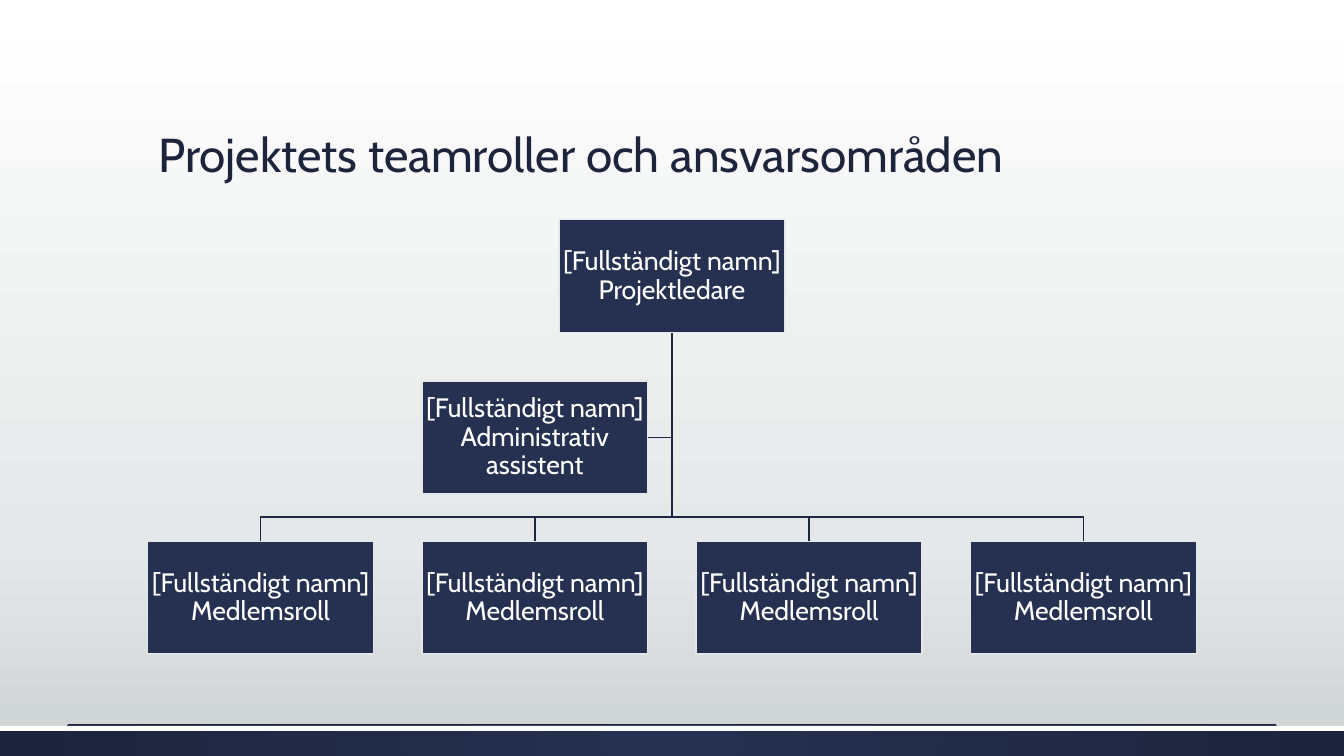
"""Build the project team organisation chart slide."""
from pptx import Presentation as Deck
from pptx.dml.color import RGBColor as Color
from pptx.enum.shapes import MSO_CONNECTOR as Link, MSO_SHAPE as Form
from pptx.enum.text import MSO_ANCHOR as Anchor, MSO_AUTO_SIZE as Auto, PP_ALIGN as Align
from pptx.oxml import parse_xml
from pptx.oxml.ns import nsdecls
from pptx.util import Inches, Pt

TITLE = "Projektets teamroller och ansvarsområden"
LEAD = "[Fullständigt namn] Projektledare"
AIDE = "[Fullständigt namn] Administrativ assistent"
TEAM = ["[Fullständigt namn] Medlemsroll"] * 4

THEME = {
    "font": "Cabin", "head": 34, "body": 19,
    "navy": "263050", "ink": "1D243C", "wire": "1E2640",
    "edge": "E5E8E8", "white": "FFFFFF",
    "sky": [(0, "FFFFFF"), (72, "E5E8E8"), (100, "CDD2D2")],
    "base": [(0, "263050"), (100, "1D243C")],
}
DOWN = '<a:lin ang="5400000" scaled="0"/>'
ROUND = '<a:path path="circle"><a:fillToRect l="50000" t="50000" r="50000" b="50000"/></a:path>'

WIDE, HIGH = 13.33, 7.5
MID = WIDE / 2
BOX_W, BOX_H, STEP = 2.24, 1.12, 2.72
TOP_Y, AIDE_Y, TEAM_Y, BAR_Y = 2.18, 3.78, 5.37, 5.13
FOOT_Y, SIDE = 7.2, 0.67

HEAD_FRAME = {"vertical_anchor": Anchor.BOTTOM, "auto_size": Auto.NONE, "word_wrap": True}
BOX_FRAME = {"vertical_anchor": Anchor.MIDDLE, "word_wrap": True}
BOX_FRAME.update({f"margin_{s}": Inches(0.01) for s in ("left", "top", "right", "bottom")})


def apply(item, values):
    """Set each named attribute on the item."""
    for key, value in values.items():
        setattr(item, key, value)


def tint(name):
    """Return a theme colour."""
    return Color.from_string(THEME[name])


def blend(fill, node, stops, mode):
    """Give a fill gradient stops and a direction."""
    fill.gradient()
    grad = node.xpath(".//a:gradFill")[0]
    for part in list(grad):
        grad.remove(part)
    marks = "".join(f'<a:gs pos="{at * 1000}"><a:srgbClr val="{hue}"/></a:gs>' for at, hue in stops)
    fresh = parse_xml(f'<a:gradFill {nsdecls("a")}><a:gsLst>{marks}</a:gsLst>{mode}</a:gradFill>')
    for part in list(fresh):
        grad.append(part)


def write(shape, text, frame, align, size, hue):
    """Put formatted text in a shape."""
    apply(shape.text_frame, frame)
    shape.text_frame.text = text
    para = shape.text_frame.paragraphs[0]
    apply(para, {"alignment": align, "line_spacing": 0.9})
    apply(para.font, {"name": THEME["font"], "size": Pt(THEME[size])})
    para.font.color.rgb = tint(hue)


def rect(slide, x, y, w, h, hue):
    """Add a flat rectangle without an outline."""
    shape = slide.shapes.add_shape(Form.RECTANGLE, *map(Inches, (x, y, w, h)))
    shape.shadow.inherit = False
    shape.fill.solid()
    shape.fill.fore_color.rgb = tint(hue)
    shape.line.fill.background()
    return shape


def box(slide, x, y, text):
    """Add one role box centred on x."""
    shape = rect(slide, x - BOX_W / 2, y, BOX_W, BOX_H, "navy")
    shape.line.color.rgb = tint("edge")
    shape.line.width = Pt(1)
    write(shape, text, BOX_FRAME, Align.CENTER, "body", "white")


def wire(slide, points):
    """Draw an open line through the points."""
    first, *rest = [(Inches(x), Inches(y)) for x, y in points]
    pen = slide.shapes.build_freeform(*first)
    pen.add_line_segments(rest, close=False)
    shape = pen.convert_to_shape()
    shape.shadow.inherit = False
    shape.fill.background()
    shape.line.color.rgb = tint("wire")
    shape.line.width = Pt(1)


def footer(slide):
    """Draw the bottom band and its rule."""
    band = rect(slide, 0, FOOT_Y, WIDE, HIGH - FOOT_Y, "navy")
    blend(band.fill, band._element, THEME["base"], ROUND)
    rect(slide, 0, FOOT_Y, WIDE, 0.05, "white")
    ends = map(Inches, (SIDE, FOOT_Y - 0.01, WIDE - SIDE, FOOT_Y - 0.01))
    rule = slide.shapes.add_connector(Link.STRAIGHT, *ends)
    rule.line.color.rgb = tint("ink")
    rule.line.width = Pt(0.5)
    rule._element.spPr.append(parse_xml(f'<a:effectLst {nsdecls("a")}/>'))


def chart(slide):
    """Draw the links, then the boxes over them."""
    spots = [MID + (i - (len(TEAM) - 1) / 2) * STEP for i in range(len(TEAM))]
    root = (MID, TOP_Y + BOX_H)
    turn = AIDE_Y + BOX_H / 2
    wire(slide, [root, (MID, turn), (spots[1] + BOX_W / 2, turn)])
    for x in spots:
        wire(slide, [root, (MID, BAR_Y), (x, BAR_Y), (x, TEAM_Y)])
    box(slide, MID, TOP_Y, LEAD)
    for x, text in zip(spots, TEAM):
        box(slide, x, TEAM_Y, text)
    box(slide, spots[1], AIDE_Y, AIDE)


def main():
    """Build and save the slide."""
    deck = Deck()
    apply(deck, {"slide_width": Inches(WIDE), "slide_height": Inches(HIGH)})
    slide = deck.slides.add_slide(deck.slide_layouts[5])
    blend(slide.background.fill, slide._element, THEME["sky"], DOWN)
    footer(slide)
    title = slide.shapes.title
    apply(title, dict(zip(("left", "top", "width", "height"), map(Inches, (1.47, 0.51, 10.4, 1.35)))))
    write(title, TITLE, HEAD_FRAME, Align.LEFT, "head", "ink")
    chart(slide)
    deck.save("out.pptx")


if __name__ == "__main__":
    main()
